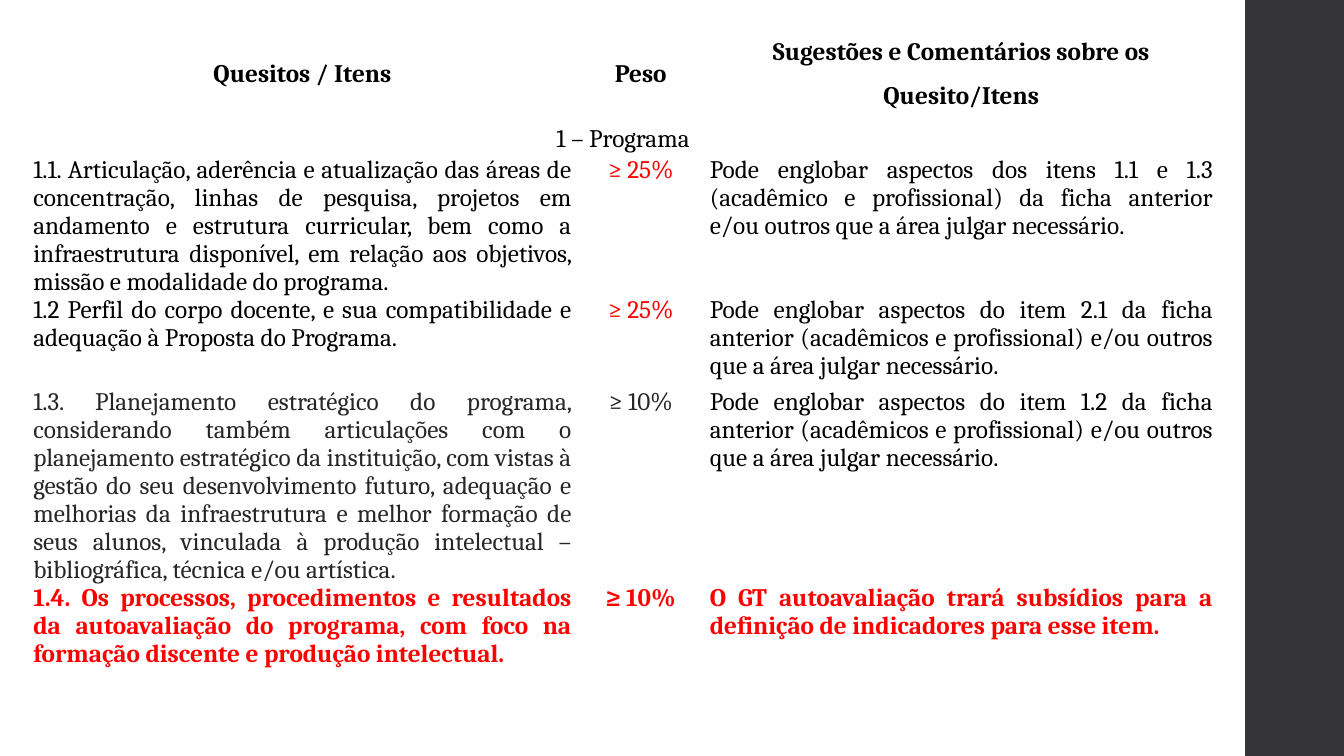
from dataclasses import dataclass

from lxml.etree import SubElement
from pptx import Presentation
from pptx.dml.color import RGBColor
from pptx.enum.shapes import MSO_SHAPE
from pptx.enum.text import MSO_ANCHOR, PP_ALIGN
from pptx.oxml.ns import qn
from pptx.util import Pt

PX = 9144  # EMU per px, 100 px to the inch


@dataclass(frozen=True)
class Theme:
    font: str = "Cambria"
    size: int = 18
    line_height: int = 20
    paper: str = "FFFFFF"
    ink: str = "000000"
    soft_ink: str = "262626"
    accent: str = "FF0000"
    sidebar: str = "353537"


THEME = Theme()
COLUMN_WIDTHS = (544, 127, 509)
CELL_INSETS = (5, 2, 5)
HEADER_HEIGHT, SECTION_HEIGHT = 71, 46
HEADERS = ("Quesitos / Itens", "Peso", "Sugestões e Comentários sobre os Quesito/Itens")
SECTION = "1 – Programa"

# Row height, cell texts, cell colours, bold
ITEMS = (
    (138,
     ("1.1. Articulação, aderência e atualização das áreas de concentração, linhas de "
      "pesquisa, projetos em andamento e estrutura curricular, bem como a infraestrutura "
      "disponível, em relação aos objetivos, missão e modalidade do programa.",
      "≥ 25%",
      "Pode englobar aspectos dos itens 1.1 e 1.3 (acadêmico e profissional) da ficha "
      "anterior e/ou outros que a área julgar necessário."),
     (THEME.ink, THEME.accent, THEME.ink), False),
    (91,
     ("1.2 Perfil do corpo docente, e sua compatibilidade e adequação à Proposta do "
      "Programa.",
      "≥ 25%",
      "Pode englobar aspectos do item 2.1 da ficha anterior (acadêmicos e profissional) "
      "e/ou outros que a área julgar necessário."),
     (THEME.ink, THEME.accent, THEME.ink), False),
    (188,
     ("1.3. Planejamento estratégico do programa, considerando também articulações com o "
      "planejamento estratégico da instituição, com vistas à gestão do seu desenvolvimento "
      "futuro, adequação e melhorias da infraestrutura e melhor formação de seus alunos, "
      "vinculada à produção intelectual – bibliográfica, técnica e/ou artística.",
      "≥ 10%",
      "Pode englobar aspectos do item 1.2 da ficha anterior (acadêmicos e profissional) "
      "e/ou outros que a área julgar necessário."),
     (THEME.soft_ink, THEME.soft_ink, THEME.ink), False),
    (94,
     ("1.4. Os processos, procedimentos e resultados da autoavaliação do programa, com "
      "foco na formação discente e produção intelectual.",
      "≥ 10%",
      "O GT autoavaliação trará subsídios para a definição de indicadores para esse item."),
     (THEME.accent,) * 3, True),
)


def add_sidebar(page, left, top, width, height):
    bar = page.shapes.add_shape(
        MSO_SHAPE.RECTANGLE, left * PX, top * PX, width * PX, height * PX)
    bar.shadow.inherit = False
    bar.fill.solid()
    bar.fill.fore_color.rgb = RGBColor.from_string(THEME.sidebar)
    bar.line.fill.background()


def format_cell(cell, inset):
    cell.margin_left = cell.margin_right = inset * PX
    cell.margin_top = cell.margin_bottom = 0
    properties = cell._tc.get_or_add_tcPr()
    for side in ("a:lnL", "a:lnR", "a:lnT", "a:lnB"):
        border = SubElement(properties, qn(side), w=str(Pt(1)))
        SubElement(SubElement(border, qn("a:solidFill")), qn("a:srgbClr"), val=THEME.paper)
    cell.fill.background()


def write_cell(cell, text, align, spacing, color=THEME.ink, bold=False):
    para = cell.text_frame.paragraphs[0]
    para.alignment = align
    para.line_spacing, before, after = spacing
    para.space_before, para.space_after = Pt(before), Pt(after)
    span = para.add_run()
    span.text = text
    span.font.name = THEME.font
    span.font.size = Pt(THEME.size)
    span.font.bold = bold
    span.font.color.rgb = RGBColor.from_string(color)


def add_criteria_table(page, left, top):
    heights = [HEADER_HEIGHT, SECTION_HEIGHT] + [item[0] for item in ITEMS]
    table = page.shapes.add_table(
        len(heights), len(COLUMN_WIDTHS), left * PX, top * PX,
        sum(COLUMN_WIDTHS) * PX, sum(heights) * PX).table
    table.first_row = table.horz_banding = False
    for column, width in zip(table.columns, COLUMN_WIDTHS):
        column.width = width * PX
    for row, height in zip(table.rows, heights):
        row.height = height * PX
        for cell, inset in zip(row.cells, CELL_INSETS):
            format_cell(cell, inset)

    # Headings and section row
    heading_spacing = (1.5, 6, 6)
    for index, text in enumerate(HEADERS):
        cell = table.cell(0, index)
        cell.vertical_anchor = MSO_ANCHOR.MIDDLE
        write_cell(cell, text, PP_ALIGN.CENTER, heading_spacing, bold=True)
    section = table.cell(1, 0)
    section.merge(table.cell(1, len(COLUMN_WIDTHS) - 1))
    write_cell(section, SECTION, PP_ALIGN.CENTER, heading_spacing)

    # Items
    item_spacing = (Pt(THEME.line_height), 2, 8)
    aligns = (PP_ALIGN.JUSTIFY, PP_ALIGN.CENTER, PP_ALIGN.JUSTIFY)
    for row_index, (_, texts, colors, bold) in enumerate(ITEMS, start=2):
        for index, (text, color, align) in enumerate(zip(texts, colors, aligns)):
            write_cell(table.cell(row_index, index), text, align, item_spacing, color, bold)


def main():
    deck = Presentation()
    deck.slide_width, deck.slide_height = 1333 * PX, 750 * PX
    page = deck.slides.add_slide(deck.slide_layouts[6])
    page.background.fill.solid()
    page.background.fill.fore_color.rgb = RGBColor.from_string(THEME.paper)
    add_sidebar(page, 1235, 0, 98, 750)
    add_criteria_table(page, 28, 23)
    deck.save("out.pptx")


if __name__ == "__main__":
    main()
